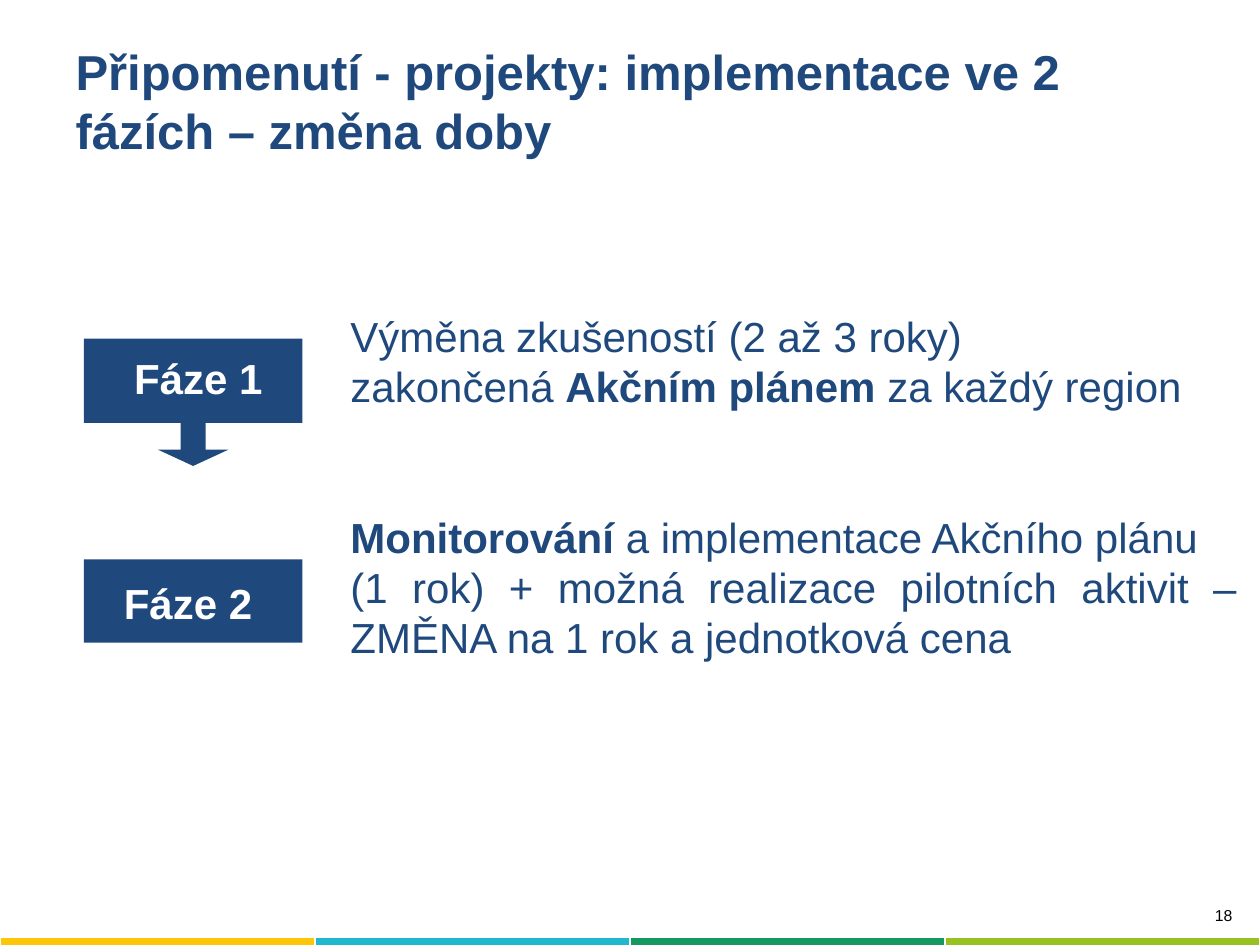
from dataclasses import dataclass

import pptx
import pptx.dml.color
import pptx.enum.shapes
import pptx.enum.text
import pptx.util

Pt = pptx.util.Pt
Align = pptx.enum.text.PP_ALIGN
Preset = pptx.enum.shapes.MSO_SHAPE


@dataclass(frozen=True)
class Theme:
    """Hold the font, colours and type sizes of the slide."""

    font: str = "Arial"
    navy: str = "1F497D"
    white: str = "FFFFFF"
    black: str = "000000"
    stripes: tuple = ("FDC609", "21B7CF", "159960", "98C222")
    title: float = 28
    body: float = 24
    number: float = 9
    title_leading: float = 33.7
    body_leading: float = 28.5


THEME = Theme()


def apply_format(target, values):
    """Set each attribute named in a dict of format values."""
    for name, value in values.items():
        setattr(target, name, value)


def fill_solid(target, color):
    """Give a shape or cell a plain fill."""
    target.fill.solid()
    target.fill.fore_color.rgb = pptx.dml.color.RGBColor.from_string(color)


def add_text(slide, box, paragraphs, size, color, bold=False, **layout):
    """Add a text box whose paragraphs are lists of (text, bold) runs."""
    frame = slide.shapes.add_textbox(*map(Pt, box)).text_frame
    margins = dict.fromkeys(("margin_left", "margin_right", "margin_top", "margin_bottom"), 0)
    apply_format(frame, {"word_wrap": True, **margins})
    for index, runs in enumerate(paragraphs):
        paragraph = frame.add_paragraph() if index else frame.paragraphs[0]
        apply_format(paragraph, layout)
        for text, emphasis in runs:
            run = paragraph.add_run()
            run.text = text
            apply_format(run.font, {"name": THEME.font, "size": Pt(size), "bold": bold or emphasis})
            run.font.color.rgb = pptx.dml.color.RGBColor.from_string(color)
    return frame


def add_phase(slide, preset, box, label, label_box, adjustments=()):
    """Add a navy phase block with its label on top."""
    shape = slide.shapes.add_shape(preset, *map(Pt, box))
    shape.shadow.inherit = False
    fill_solid(shape, THEME.navy)
    shape.line.fill.background()
    for index, value in enumerate(adjustments):
        shape.adjustments[index] = value
    add_text(slide, label_box, [[(label, True)]], THEME.body, THEME.white,
             alignment=Align.CENTER, line_spacing=Pt(THEME.body_leading))


def add_stripe(slide, box):
    """Add the one-row table that colours the foot of the slide."""
    table = slide.shapes.add_table(1, len(THEME.stripes), *map(Pt, box)).table
    for cell, color in zip(table.rows[0].cells, THEME.stripes):
        apply_format(cell, {"margin_top": 0, "margin_bottom": 0})
        fill_solid(cell, color)


def main():
    """Build the slide and save it."""
    presentation = pptx.Presentation()
    apply_format(presentation, {"slide_width": Pt(720), "slide_height": Pt(540)})
    slide = presentation.slides.add_slide(presentation.slide_layouts[6])

    add_stripe(slide, (0, 535.7, 720, 12.24))
    add_text(slide, (576, 517.7, 128.2, 15), [[("18", False)]], THEME.number, THEME.black,
             alignment=Align.RIGHT)
    add_text(slide, (43.2, 23.6, 633.6, 67.4),
             [[("Připomenutí - projekty: implementace ve 2 fázích – změna doby", True)]],
             THEME.title, THEME.navy, line_spacing=Pt(THEME.title_leading))
    body = add_text(slide, (200.3, 177.7, 506.5, 201), [
        [("Výměna zkušeností (2 až 3 roky)", False)],
        [("zakončená ", False), ("Akčním plánem ", True), ("za každý region", False)],
        [("Monitorování ", True), ("a implementace Akčního plánu", False)],
        [("(1 rok) + možná realizace pilotních aktivit – ZMĚNA na 1 rok a jednotková cena", False)],
    ], THEME.body, THEME.navy, alignment=Align.JUSTIFY, line_spacing=Pt(THEME.body_leading))
    body.paragraphs[2].space_before = Pt(58)

    add_phase(slide, Preset.DOWN_ARROW_CALLOUT, (48, 193.5, 124.8, 72.8), "Fáze 1",
              (60.5, 201.6, 105.8, 28.5), (0.196, 0.277, 0.128, 0.663))
    add_phase(slide, Preset.RECTANGLE, (48, 319.6, 124.8, 47.6), "Fáze 2",
              (48, 330.5, 118.8, 28.5))
    presentation.save("out.pptx")


if __name__ == "__main__":
    main()
